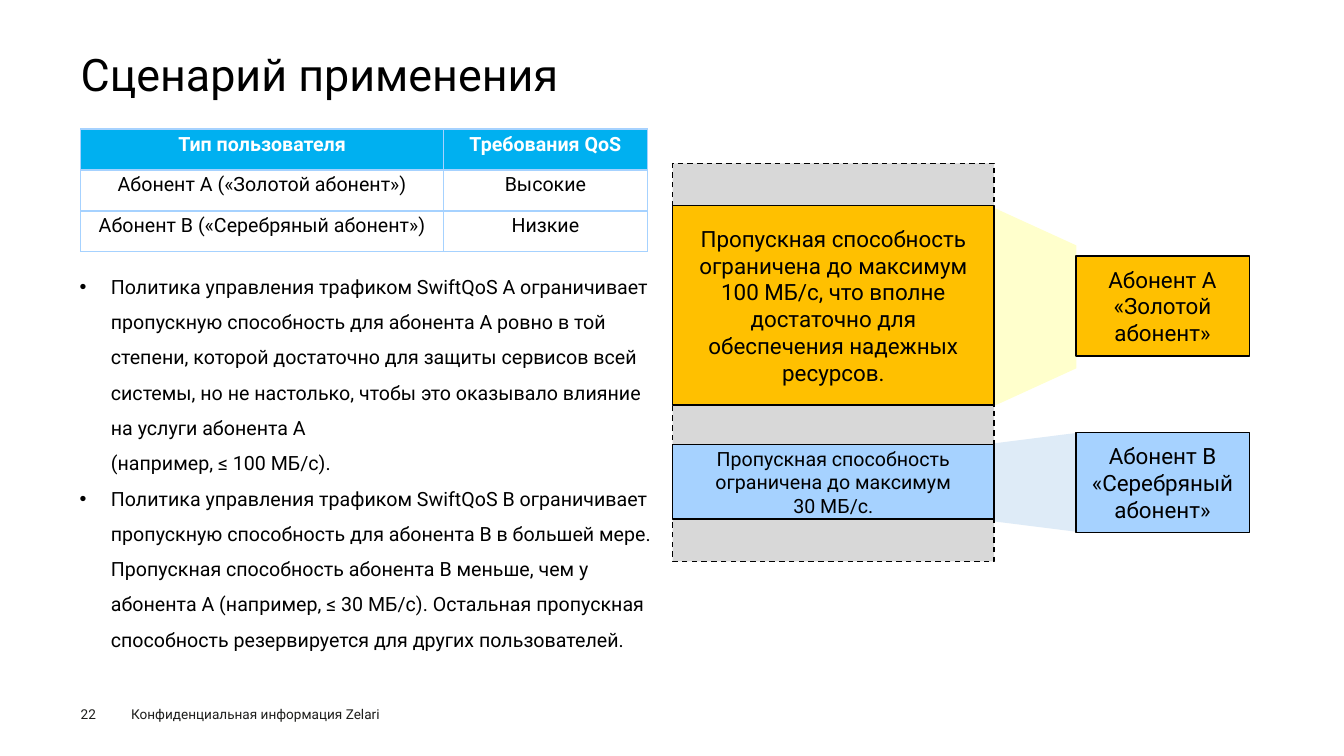
from lxml import etree
from pptx import Presentation
from pptx import util as u
from pptx.dml.color import RGBColor
from pptx.enum import dml, shapes, text
from pptx.oxml import ns

Inches = u.Inches
FONT = "Roboto"
BLACK = RGBColor(0x00, 0x00, 0x00)
WHITE = RGBColor(0xFF, 0xFF, 0xFF)
INK = RGBColor(0x1D, 0x1D, 0x1B)
HEADER_BLUE = RGBColor(0x00, 0xB0, 0xF0)
SILVER_BLUE = RGBColor(0xA6, 0xD2, 0xFF)
PALE_BLUE = RGBColor(0xDE, 0xEB, 0xF7)
GOLD = RGBColor(0xFF, 0xC0, 0x00)
PALE_YELLOW = RGBColor(0xFF, 0xFF, 0xCC)
GREY = RGBColor(0xD8, 0xD8, 0xD8)

USER_ROWS = [
    ("Тип пользователя", "Требования QoS"),
    ("Абонент A («Золотой абонент»)", "Высокие"),
    ("Абонент B («Серебряный абонент»)", "Низкие"),
]
POLICIES = [
    "Политика управления трафиком SwiftQoS A ограничивает пропускную "
    "способность для абонента A ровно в той степени, которой достаточно для "
    "защиты сервисов всей системы, но не настолько, чтобы это оказывало "
    "влияние на услуги абонента A\n(например, ≤ 100 МБ/с).",
    "Политика управления трафиком SwiftQoS B ограничивает пропускную "
    "способность для абонента B в большей мере. Пропускная способность "
    "абонента B меньше, чем у абонента A (например, ≤ 30 МБ/с). Остальная "
    "пропускная способность резервируется для других пользователей.",
]
GOLD_LIMIT = ("Пропускная способность ограничена до максимум 100 МБ/с, что "
              "вполне достаточно для обеспечения надежных ресурсов.")
SILVER_LIMIT = "Пропускная способность ограничена до максимум\n30 МБ/с."

CHANNEL_LEFT, CHANNEL_WIDTH = 6.67, 3.19
USER_LEFT, USER_WIDTH, USER_HEIGHT = 10.67, 1.72, 0.99


def place(shape, left, top, width, height):
    shape.left, shape.top = Inches(left), Inches(top)
    shape.width, shape.height = Inches(width), Inches(height)


def set_margins(frame, horizontal, vertical):
    frame.margin_left = frame.margin_right = Inches(horizontal)
    frame.margin_top = frame.margin_bottom = Inches(vertical)


def add_runs(paragraph, content, size, color=BLACK, bold=False):
    for index, line in enumerate(content.split("\n")):
        if index:
            paragraph.add_line_break()
        run = paragraph.add_run()
        run.text = line
        run.font.name = FONT
        run.font.size = u.Pt(size)
        run.font.bold = bold
        run.font.color.rgb = color


def write_paragraphs(frame, contents, size, color=BLACK, alignment=text.PP_ALIGN.LEFT):
    for index, content in enumerate(contents):
        paragraph = frame.add_paragraph() if index else frame.paragraphs[0]
        paragraph.alignment = alignment
        add_runs(paragraph, content, size, color)


def add_title(slide, content):
    title = slide.shapes.title
    place(title, 0.8, 0.49, 11.73, 0.54)
    frame = title.text_frame
    set_margins(frame, 0, 0)
    frame.auto_size = text.MSO_AUTO_SIZE.NONE
    frame.vertical_anchor = text.MSO_ANCHOR.MIDDLE
    write_paragraphs(frame, [content], 32)
    frame.paragraphs[0].line_spacing = 0.9


def add_policies(slide):
    body = slide.placeholders[1]
    place(body, 0.69, 2.56, 5.97, 4.34)
    frame = body.text_frame
    frame.auto_size = text.MSO_AUTO_SIZE.NONE
    write_paragraphs(frame, POLICIES, 14)
    for paragraph in frame.paragraphs:
        properties = paragraph._p.get_or_add_pPr()
        properties.set("marL", str(Inches(0.31)))
        properties.set("indent", str(Inches(-0.31)))
        etree.SubElement(properties, ns.qn("a:buChar"), char="•")
        paragraph.line_spacing = 1.5
        paragraph.space_before = u.Pt(0)


def set_borders(cell, color):
    properties = cell._tc.get_or_add_tcPr()
    for side in ("a:lnL", "a:lnR", "a:lnT", "a:lnB"):
        line = etree.SubElement(properties, ns.qn(side), w=str(u.Pt(1)))
        fill = etree.SubElement(line, ns.qn("a:solidFill"))
        etree.SubElement(fill, ns.qn("a:srgbClr"), val=str(color))


def add_user_table(slide):
    frame = slide.shapes.add_table(3, 2, Inches(0.8), Inches(1.28), Inches(5.62), Inches(1.22))
    table = frame.table
    table.horz_banding = False
    for column, width in zip(table.columns, (3.6, 2.02)):
        column.width = Inches(width)
    for row_index, row in enumerate(USER_ROWS):
        header = row_index == 0
        for column_index, content in enumerate(row):
            cell = table.cell(row_index, column_index)
            set_borders(cell, SILVER_BLUE)
            if header:
                set_margins(cell, 0.09, 0.04)
                cell.fill.solid()
                cell.fill.fore_color.rgb = HEADER_BLUE
            else:
                set_margins(cell, 0.03, 0.03)
                cell.fill.background()
            paragraph = cell.text_frame.paragraphs[0]
            paragraph.alignment = text.PP_ALIGN.CENTER
            add_runs(paragraph, content, 14, WHITE if header else BLACK, header)


def add_filled(slide, kind, left, top, width, height, color):
    shape = slide.shapes.add_shape(kind, 0, 0, 0, 0)
    place(shape, left, top, width, height)
    shape.shadow.inherit = False
    shape.fill.solid()
    shape.fill.fore_color.rgb = color
    shape.line.fill.background()
    return shape


def add_beam(slide, left, top, width, height, color, rotation, slope):
    beam = add_filled(slide, shapes.MSO_SHAPE.TRAPEZOID, left, top, width, height, color)
    beam.rotation = rotation
    beam.adjustments[0] = slope


def add_box(slide, left, top, width, height, color, contents=(), size=16, side_margin=0.1):
    box = add_filled(slide, shapes.MSO_SHAPE.RECTANGLE, left, top, width, height, color)
    box.line.color.rgb = BLACK
    box.line.width = u.Pt(1)
    frame = box.text_frame
    frame.word_wrap = True
    frame.vertical_anchor = text.MSO_ANCHOR.MIDDLE
    set_margins(frame, side_margin, 0.05)
    write_paragraphs(frame, contents, size, alignment=text.PP_ALIGN.CENTER)
    return box


def add_footer(slide, left, top, width, height, content):
    box = slide.shapes.add_textbox(Inches(left), Inches(top), Inches(width), Inches(height))
    set_margins(box.text_frame, 0, 0)
    box.text_frame.word_wrap = True
    write_paragraphs(box.text_frame, [content], 9.7, INK)


def add_bandwidth_diagram(slide):
    add_beam(slide, 9.78, 4.38, 0.98, 0.81, PALE_BLUE, 270, 0.126)
    add_beam(slide, 9.29, 2.64, 1.96, 0.81, PALE_YELLOW, 90, 0.457)
    channel = add_box(slide, CHANNEL_LEFT, 1.62, CHANNEL_WIDTH, 3.95, GREY)
    channel.line.dash_style = dml.MSO_LINE.DASH
    add_box(slide, CHANNEL_LEFT, 2.04, CHANNEL_WIDTH, 1.98, GOLD, [GOLD_LIMIT])
    add_box(slide, CHANNEL_LEFT, 4.41, CHANNEL_WIDTH, 0.74, SILVER_BLUE, [SILVER_LIMIT], 14)
    add_box(slide, USER_LEFT, 2.54, USER_WIDTH, USER_HEIGHT, GOLD,
            ["Абонент A", "«Золотой абонент»"])
    add_box(slide, USER_LEFT, 4.29, USER_WIDTH, USER_HEIGHT, SILVER_BLUE,
            ["Абонент B", "«Серебряный абонент»"], side_margin=0)


def main():
    presentation = Presentation()
    presentation.slide_width = Inches(13.33)
    presentation.slide_height = Inches(7.5)
    slide = presentation.slides.add_slide(presentation.slide_layouts[1])
    add_footer(slide, 1.3, 7, 2.88, 0.16, "Конфиденциальная информация Zelari")
    add_footer(slide, 0.8, 7, 0.55, 0.16, "22")
    add_title(slide, "Сценарий применения")
    add_user_table(slide)
    add_policies(slide)
    add_bandwidth_diagram(slide)
    presentation.save("out.pptx")


if __name__ == "__main__":
    main()
